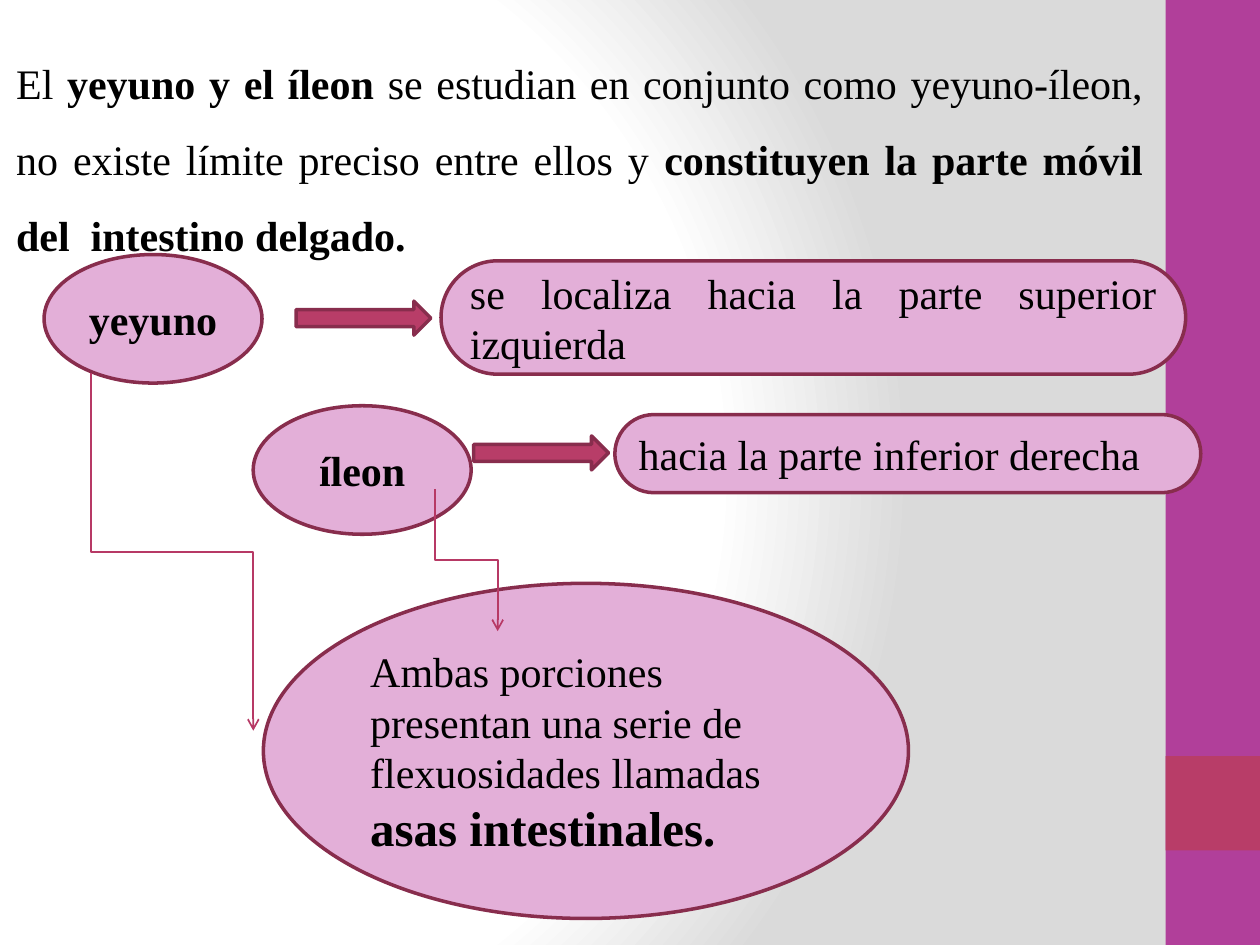
"""Build the slide on the jejunum and the ileum."""
from typing import NamedTuple

from lxml import etree
from pptx import Presentation
from pptx.dml.color import RGBColor
from pptx.enum.shapes import MSO_CONNECTOR, MSO_SHAPE
from pptx.enum.text import MSO_ANCHOR, PP_ALIGN
from pptx.oxml import parse_xml
from pptx.oxml.ns import nsdecls, qn
from pptx.util import Inches, Pt

ELBOW = MSO_CONNECTOR.ELBOW
RECTANGLE, OVAL = MSO_SHAPE.RECTANGLE, MSO_SHAPE.OVAL
PILL, ARROW = MSO_SHAPE.ROUNDED_RECTANGLE, MSO_SHAPE.RIGHT_ARROW
LEFT, CENTER, JUSTIFY = PP_ALIGN.LEFT, PP_ALIGN.CENTER, PP_ALIGN.JUSTIFY
MIDDLE = MSO_ANCHOR.MIDDLE

BLACK = RGBColor(0x00, 0x00, 0x00)
PURPLE = RGBColor(0xB1, 0x3F, 0x9A)
CRIMSON = RGBColor(0xB8, 0x3D, 0x68)
ROSE = RGBColor(0xB7, 0x39, 0x65)
PINK = RGBColor(0xE3, 0xAF, 0xD8)
WINE = RGBColor(0x88, 0x2D, 0x4D)
FONT = "Times New Roman"
GRADIENT_STOPS = ((0, "FFFFFF"), (75, "FFFFFF"), (100, "DADADA"))


class Words(NamedTuple):
    text: str
    bold: bool = False
    size: int | None = None


class Bubble(NamedTuple):
    kind: int
    left: float
    top: float
    width: float
    height: float
    align: int
    words: list[Words]


class Link(NamedTuple):
    start: tuple[float, float]
    end: tuple[float, float]


INTRO = [
    Words("El "),
    Words("yeyuno y el íleon ", True),
    Words("se estudian en conjunto como yeyuno-íleon, "
          "no existe límite preciso entre ellos y "),
    Words("constituyen la parte móvil del  intestino delgado.", True),
]
BUBBLES = [
    Bubble(OVAL, 0.35, 2.02, 1.73, 1.02, CENTER, [Words("yeyuno", True)]),
    Bubble(OVAL, 2.01, 3.22, 1.73, 1.02, CENTER, [Words("íleon", True)]),
    Bubble(PILL, 3.5, 2.07, 5.91, 0.9, JUSTIFY,
           [Words("se localiza hacia la parte superior izquierda")]),
    Bubble(PILL, 4.88, 3.29, 4.65, 0.62, JUSTIFY,
           [Words("hacia la parte inferior derecha")]),
    Bubble(OVAL, 2.09, 4.63, 5.12, 2.66, LEFT,
           [Words("Ambas porciones presentan una serie de flexuosidades llamadas "),
            Words("asas intestinales.", True, 28)]),
]
ARROW_CORNERS = [(2.35, 2.39), (3.76, 3.46)]
LINKS = [Link((0.72, 2.96), (2.01, 5.8)), Link((3.45, 3.88), (3.95, 5.01))]


def paint_background(slide) -> None:
    stops = "".join(
        f'<a:gs pos="{position * 1000}"><a:srgbClr val="{color}"/></a:gs>'
        for position, color in GRADIENT_STOPS)
    background = parse_xml(
        f'<p:bg {nsdecls("p", "a")}><p:bgPr><a:gradFill rotWithShape="1">'
        f'<a:gsLst>{stops}</a:gsLst><a:path path="circle">'
        '<a:fillToRect l="20000" t="50000" r="100000" b="50000"/></a:path>'
        '</a:gradFill><a:effectLst/></p:bgPr></p:bg>')
    slide.element.cSld.insert(0, background)


def add_block(slide, kind: int, left: float, top: float, width: float,
              height: float, fill: RGBColor, outline: RGBColor | None = None):
    block = slide.shapes.add_shape(
        kind, Inches(left), Inches(top), Inches(width), Inches(height))
    block.shadow.inherit = False
    block.fill.solid()
    block.fill.fore_color.rgb = fill
    if outline is None:
        block.line.fill.background()
    else:
        block.line.color.rgb = outline
        block.line.width = Pt(2)
    return block


def write(frame, words: list[Words], align: int) -> None:
    frame.word_wrap = True
    paragraph = frame.paragraphs[0]
    paragraph.alignment = align
    paragraph.font.name = FONT
    paragraph.font.size = Pt(24)
    paragraph.font.color.rgb = BLACK
    for part in words:
        run = paragraph.add_run()
        run.text = part.text
        run.font.bold = part.bold
        if part.size:
            run.font.size = Pt(part.size)


def add_intro(slide) -> None:
    intro = slide.shapes.add_textbox(
        Inches(0.03), Inches(0.21), Inches(9.14), Inches(6.16))
    write(intro.text_frame, INTRO, JUSTIFY)
    intro.text_frame.paragraphs[0].line_spacing = 1.5


def add_bubble(slide, bubble: Bubble) -> None:
    shape = add_block(slide, *bubble[:5], PINK, WINE)
    if bubble.kind == PILL:
        shape.adjustments[0] = 0.5
    shape.text_frame.vertical_anchor = MIDDLE
    write(shape.text_frame, bubble.words, bubble.align)


def add_link(slide, link: Link) -> None:
    """Draw an elbow that leaves and arrives vertically."""
    (x1, y1), (x2, y2) = link
    middle_x, middle_y = (x1 + x2) / 2, (y1 + y2) / 2
    half_drop, half_shift = (y2 - y1) / 2, (x2 - x1) / 2
    connector = slide.shapes.add_connector(
        ELBOW,
        Inches(middle_x + half_drop), Inches(middle_y - half_shift),
        Inches(middle_x - half_drop), Inches(middle_y + half_shift))
    connector.line.color.rgb = ROSE
    connector.line.width = Pt(1)
    properties = connector.element.spPr
    properties.find(qn("a:xfrm")).set("rot", str(270 * 60000))
    etree.SubElement(properties.find(qn("a:ln")), qn("a:tailEnd"), type="arrow")
    etree.SubElement(properties, qn("a:effectLst"))


def main() -> None:
    deck = Presentation()
    deck.slide_width, deck.slide_height = Inches(10), Inches(7.5)
    slide = deck.slides.add_slide(deck.slide_layouts[6])
    paint_background(slide)
    add_block(slide, RECTANGLE, 9.25, 0, 0.75, 7.5, PURPLE)
    add_block(slide, RECTANGLE, 9.25, 6, 0.75, 0.75, CRIMSON)
    add_intro(slide)
    for bubble in BUBBLES:
        add_bubble(slide, bubble)
    for left, top in ARROW_CORNERS:
        add_block(slide, ARROW, left, top, 1.07, 0.27, CRIMSON, WINE)
    for link in LINKS:
        add_link(slide, link)
    deck.save("out.pptx")


if __name__ == "__main__":
    main()
